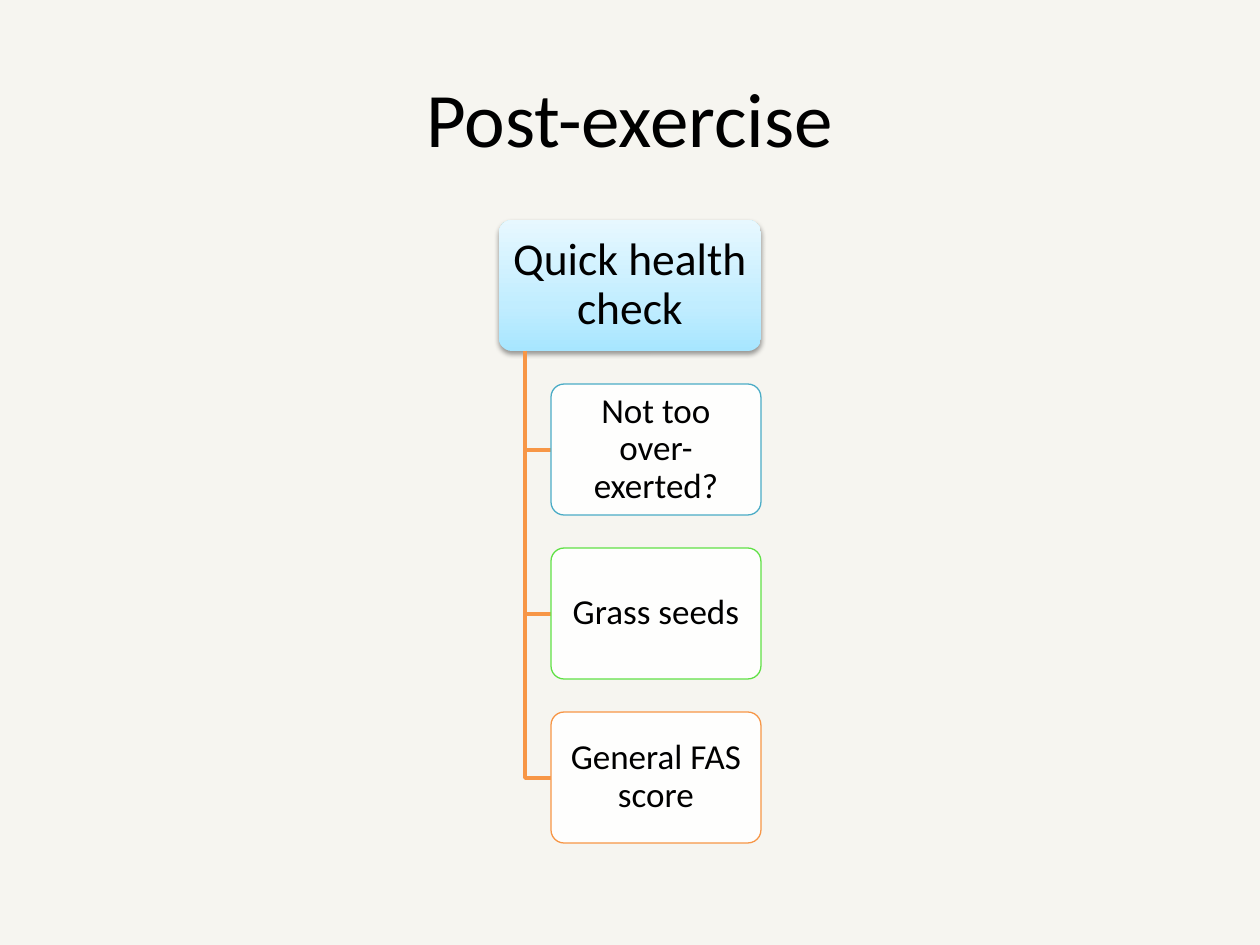
from copy import deepcopy

from lxml.etree import SubElement
from pptx import Presentation
from pptx.dml.color import RGBColor
from pptx.enum.shapes import MSO_SHAPE
from pptx.enum.text import MSO_ANCHOR, PP_ALIGN
from pptx.oxml.ns import qn
from pptx.util import Pt

PX = 914400 / 126  # EMU per px

BLACK = RGBColor(0x00, 0x00, 0x00)
BACKGROUND = RGBColor(0xF6, 0xF5, 0xF0)
BOX_FILL = RGBColor(0xFE, 0xFE, 0xFD)
TEAL = RGBColor(0x4B, 0xAC, 0xC6)
GREEN = RGBColor(0x60, 0xE1, 0x46)
ORANGE = RGBColor(0xF7, 0x96, 0x46)
BLUE_STOPS = [(0, RGBColor(0xA7, 0xE6, 0xFF)),
              (0.35, RGBColor(0xC1, 0xED, 0xFF)),
              (1, RGBColor(0xE7, 0xF8, 0xFF))]

# Content
TITLE = "Post-exercise"
HEADING = "Quick health check"
CHECKS = [("Not too over-exerted?", TEAL),
          ("Grass seeds", GREEN),
          ("General FAS score", ORANGE)]

# Hierarchy grid, in px
LEFT, TOP, WIDTH, HEIGHT, GAP = 499, 220, 262, 131, 33
TRUNK_X, CHECK_X = LEFT + 26, LEFT + 52


def emu(*lengths):
    return [round(n * PX) for n in lengths]


def add_text(tf, text, size):
    tf.word_wrap = True
    tf.vertical_anchor = MSO_ANCHOR.MIDDLE
    p = tf.paragraphs[0]
    p.alignment = PP_ALIGN.CENTER
    r = p.add_run()
    r.text = text
    r.font.size = Pt(size)
    r.font.name = "Calibri"
    r.font.color.rgb = BLACK
    return p


def add_box(s, text, size, x, y, w, inset):
    sp = s.shapes.add_shape(MSO_SHAPE.ROUNDED_RECTANGLE, *emu(x, y, w, HEIGHT))
    sp.adjustments[0] = 0.1
    sp.shadow.inherit = False
    tf = sp.text_frame
    tf.margin_left, tf.margin_right, tf.margin_top, tf.margin_bottom = emu(*[inset] * 4)
    add_text(tf, text, size).line_spacing = 0.9
    return sp


def add_elbow(s, y):
    fb = s.shapes.build_freeform(TRUNK_X, TOP + HEIGHT, scale=PX)
    fb.add_line_segments([(TRUNK_X, y), (CHECK_X, y)], close=False)
    sp = fb.convert_to_shape()
    sp.shadow.inherit = False
    sp.fill.background()
    sp.line.color.rgb = ORANGE
    sp.line.width = Pt(2)


def style_heading(sp):
    sp.line.fill.background()
    # Three-stop gradient, lightest at the top
    sp.fill.gradient()
    sp.fill.gradient_angle = 90
    stops = sp._element.spPr.find(qn("a:gradFill")).find(qn("a:gsLst"))
    stops.insert(1, deepcopy(stops[0]))
    for stop, (position, color) in zip(sp.fill.gradient_stops, BLUE_STOPS):
        stop.position = position
        stop.color.rgb = color
    # Soft shadow below
    effects = sp._element.spPr.find(qn("a:effectLst"))
    shadow = SubElement(effects, qn("a:outerShdw"), blurRad=str(Pt(3.1)),
                        dist=str(Pt(1.6)), dir="5400000", rotWithShape="0")
    color = SubElement(shadow, qn("a:srgbClr"), val="000000")
    SubElement(color, qn("a:alpha"), val="38000")


def main():
    prs = Presentation()
    prs.slide_width, prs.slide_height = emu(1260, 945)
    s = prs.slides.add_slide(prs.slide_layouts[5])
    s.background.fill.solid()
    s.background.fill.fore_color.rgb = BACKGROUND

    # Title
    title = s.shapes.title
    title.left, title.top, title.width, title.height = emu(63, 38, 1134, 157)
    add_text(title.text_frame, TITLE, 44)

    # Heading box
    style_heading(add_box(s, HEADING, 26, LEFT, TOP, WIDTH, 10))

    # Checks hanging from the trunk
    for i, (text, color) in enumerate(CHECKS, start=1):
        y = TOP + i * (HEIGHT + GAP)
        add_elbow(s, y + HEIGHT / 2)
        sp = add_box(s, text, 20, CHECK_X, y, LEFT + WIDTH - CHECK_X, 8)
        sp.fill.solid()
        sp.fill.fore_color.rgb = BOX_FILL
        sp.line.color.rgb = color
        sp.line.width = Pt(0.75)

    prs.save("out.pptx")


if __name__ == "__main__":
    main()
